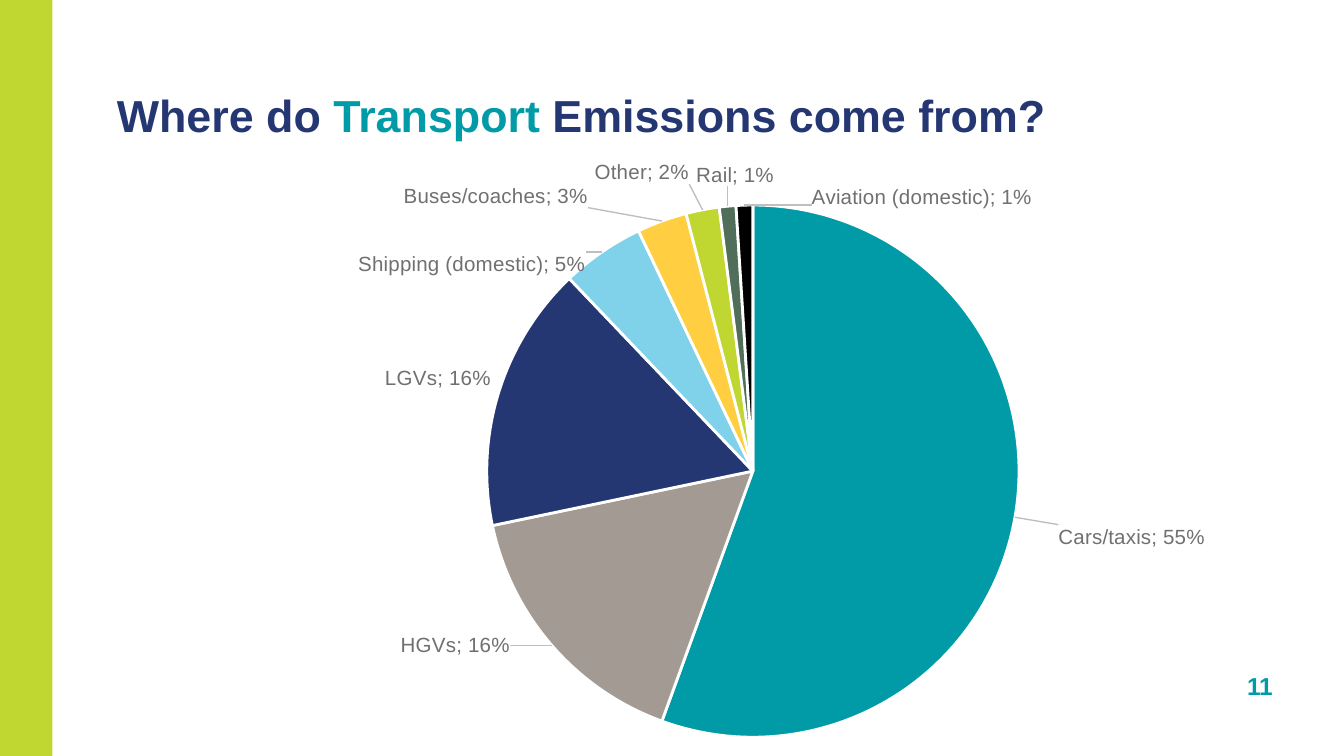
import pptx
import pptx.chart.data
import pptx.dml.color
import pptx.enum.chart
import pptx.enum.shapes
import pptx.enum.text
import pptx.oxml
import pptx.oxml.ns
import pptx.util
from pptx.util import Inches

TEAL, NAVY, LIME, GREY = "009BA7", "253773", "C0D631", "706F72"


def color(hex_code):
    return pptx.dml.color.RGBColor.from_string(hex_code)


def add_text(page, place, spans, size, align):
    box = page.shapes.add_textbox(*map(Inches, place))
    frame = box.text_frame
    settings = {
        "word_wrap": True,
        "vertical_anchor": pptx.enum.text.MSO_ANCHOR.BOTTOM,
        "margin_left": 0, "margin_right": 0, "margin_top": 0, "margin_bottom": 0,
    }
    for name, value in settings.items():
        setattr(frame, name, value)
    para = frame.paragraphs[0]
    para.alignment = align
    for text, hex_code in spans:
        span = para.add_run()
        span.text = text
        for name, value in {"name": "Arial", "size": pptx.util.Pt(size), "bold": True}.items():
            setattr(span.font, name, value)
        span.font.color.rgb = color(hex_code)


# Widescreen 16:9 page
deck = pptx.Presentation()
deck.slide_width = Inches(10)
deck.slide_height = Inches(10) * 9 // 16
page = deck.slides.add_slide(deck.slide_layouts[6])

# Side band
band = page.shapes.add_shape(
    pptx.enum.shapes.MSO_SHAPE.RECTANGLE,
    Inches(-0.12), Inches(-0.04), Inches(0.51), Inches(5.71))
band.shadow.inherit = False
band.fill.solid()
band.fill.fore_color.rgb = color(LIME)
band.line.fill.background()

# Title and page number
title = [("Where do ", NAVY), ("Transport ", TEAL), ("Emissions come from?", NAVY)]
add_text(page, (0.87, 0.62, 7.44, 0.43), title, 24, pptx.enum.text.PP_ALIGN.LEFT)
add_text(page, (8.78, 4.89, 0.69, 0.32), [("11", TEAL)], 13.1, pptx.enum.text.PP_ALIGN.RIGHT)

# Pie chart: category, share, colour, label shift as a fraction of the chart
slices = [
    ("Cars/taxis", 0.55, TEAL, (0.03, 0.01)),
    ("HGVs", 0.16, "A39A94", (-0.03, -0.03)),
    ("LGVs", 0.16, NAVY, (0, 0)),
    ("Shipping (domestic)", 0.05, "7FD2EA", (-0.01, 0.05)),
    ("Buses/coaches", 0.03, "FFCF41", (-0.06, -0.01)),
    ("Other", 0.02, LIME, (-0.01, -0.03)),
    ("Rail", 0.01, "506E5A", (0.04, -0.02)),
    ("Aviation (domestic)", 0.01, "000000", (0.15, 0.02)),
]
data = pptx.chart.data.CategoryChartData(number_format="0%")
data.categories = [entry[0] for entry in slices]
data.add_series("Series 1", [entry[1] for entry in slices])
chart = page.shapes.add_chart(
    pptx.enum.chart.XL_CHART_TYPE.PIE,
    Inches(1.06), Inches(1.17), Inches(8.82), Inches(4.45), data).chart
chart.has_legend = False
chart.has_title = False
chart.font.name = "Arial"
chart.font.size = pptx.util.Pt(10)
chart.font.color.rgb = color("414042")
plot = chart.plots[0]
plot.vary_by_categories = True
series = plot.series[0]

# Shared label settings
labels = series.data_labels
label_settings = {
    "show_value": True, "show_category_name": True, "show_percentage": False,
    "number_format": "0%", "number_format_is_linked": False,
    "position": pptx.enum.chart.XL_LABEL_POSITION.OUTSIDE_END,
}
for name, value in label_settings.items():
    setattr(labels, name, value)
labels.font.size = pptx.util.Pt(11)
labels.font.name = "Arial"
labels.font.color.rgb = color(GREY)

# Slices and their shifted labels
namespace = pptx.oxml.ns.nsdecls("c", "a")
for index, (category, share, hex_code, (shift_x, shift_y)) in enumerate(slices):
    point = series.points[index]
    point.format.fill.solid()
    point.format.fill.fore_color.rgb = color(hex_code)
    point.format.line.color.rgb = color("FFFFFF")
    point.format.line.width = pptx.util.Pt(1.5)
    label = point.data_label
    label.position = pptx.enum.chart.XL_LABEL_POSITION.OUTSIDE_END
    label.font.size = pptx.util.Pt(11)
    label.font.name = "Arial"
    label.font.color.rgb = color(GREY)
    element = labels._element.xpath(f"c:dLbl[c:idx/@val='{index}']")[0]
    for flag, value in {"showCatName": "1", "showVal": "1", "showPercent": "0"}.items():
        element.xpath(f"c:{flag}")[0].set("val", value)
    element.append(pptx.oxml.parse_xml(f"<c:separator {namespace}>; </c:separator>"))
    element.xpath("c:txPr")[0].addprevious(pptx.oxml.parse_xml(
        f'<c:numFmt {namespace} formatCode="0%" sourceLinked="0"/>'))
    if shift_x or shift_y:
        element.xpath("c:idx")[0].addnext(pptx.oxml.parse_xml(
            f'<c:layout {namespace}><c:manualLayout>'
            f'<c:x val="{shift_x}"/><c:y val="{shift_y}"/></c:manualLayout></c:layout>'))

# Leader lines
for old in labels._element.xpath("c:showLeaderLines"):
    labels._element.remove(old)
for markup in (
    f"<c:separator {namespace}>; </c:separator>",
    f'<c:showLeaderLines {namespace} val="1"/>',
    f'<c:leaderLines {namespace}><c:spPr><a:ln w="9525"><a:solidFill>'
    '<a:srgbClr val="BFBFBF"/></a:solidFill></a:ln></c:spPr></c:leaderLines>',
):
    labels._element.append(pptx.oxml.parse_xml(markup))

# Fixed pie area within the chart
plot_area = chart._chartSpace.xpath("c:chart/c:plotArea")[0]
for old in plot_area.xpath("c:layout"):
    plot_area.remove(old)
area = {"x": 0.29, "y": 0.08, "w": 0.45, "h": 0.89}
sizes = "".join(f'<c:{name} val="{value}"/>' for name, value in area.items())
plot_area.insert(0, pptx.oxml.parse_xml(
    f'<c:layout {namespace}><c:manualLayout><c:layoutTarget val="inner"/>'
    f'<c:xMode val="edge"/><c:yMode val="edge"/>{sizes}</c:manualLayout></c:layout>'))

deck.save("out.pptx")
